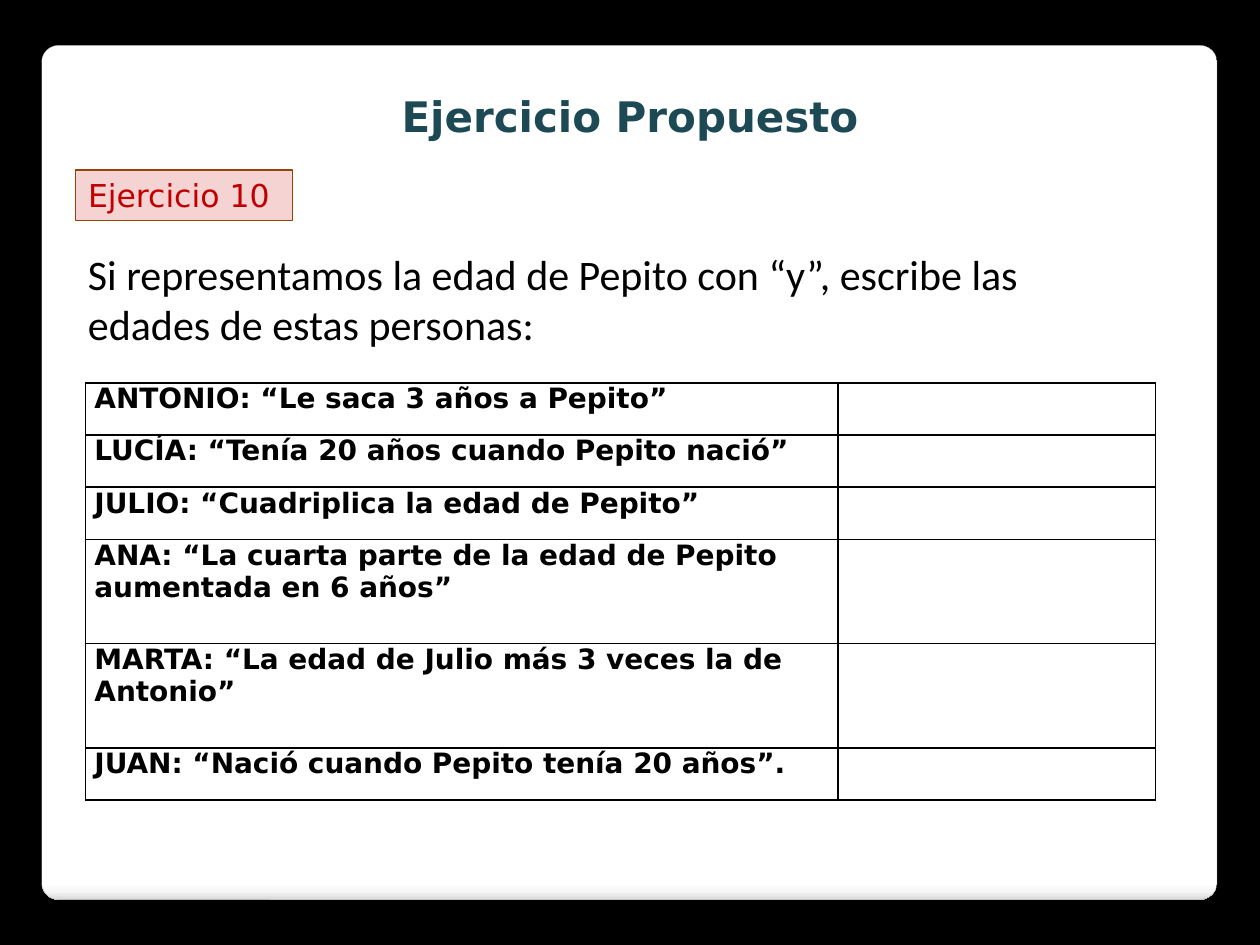
from lxml import etree
from pptx import Presentation
from pptx.dml.color import RGBColor
from pptx.enum.shapes import MSO_SHAPE
from pptx.enum.text import MSO_ANCHOR, PP_ALIGN
from pptx.oxml import parse_xml
from pptx.oxml.ns import qn
from pptx.util import Inches, Pt

ROUNDED, RECTANGLE = MSO_SHAPE.ROUNDED_RECTANGLE, MSO_SHAPE.RECTANGLE
LEFT, CENTER = PP_ALIGN.LEFT, PP_ALIGN.CENTER
TOP = MSO_ANCHOR.TOP
DRAWING_NS = "http://schemas.openxmlformats.org/drawingml/2006/main"

COLORS = {
    "background": "000000", "panel_line": "A4A4A4", "title": "1C4954",
    "label_fill": "F5D3D3", "label_line": "964305", "label": "C00000",
    "text": "000000", "white": "FFFFFF",
}
PANEL_STOPS = [(0, "FFFFFF"), (98, "FFFFFF"), (99, "F7F7F7"), (100, "DADADA")]

TITLE = "Ejercicio Propuesto"
LABEL = "Ejercicio 10"
QUESTION = ("Si representamos la edad de Pepito con “y”, "
            "escribe las edades de estas personas:")
# Statement and the number of lines its row allows
PEOPLE = [
    ("ANTONIO: “Le saca 3 años a Pepito”", 1),
    ("LUCÍA: “Tenía 20 años cuando Pepito nació”", 1),
    ("JULIO: “Cuadriplica la edad de Pepito”", 1),
    ("ANA: “La cuarta parte de la edad de Pepito aumentada en 6 años”", 2),
    ("MARTA: “La edad de Julio más 3 veces la de Antonio”", 2),
    ("JUAN: “Nació cuando Pepito tenía 20 años”.", 1),
]
COLUMN_WIDTHS = [5.97, 2.52]
TABLE_HEIGHT = 3.31

FORMATS = {
    "title": {"name": "DejaVu Sans", "size": Pt(24), "bold": True},
    "label": {"name": "DejaVu Sans", "size": Pt(18), "bold": False},
    "question": {"name": "Calibri", "size": Pt(24), "bold": False},
    "statement": {"name": "DejaVu Sans", "size": Pt(16), "bold": True},
}


def rgb(key):
    return RGBColor.from_string(COLORS[key])


def write(frame, text, style, color, align=LEFT):
    frame.word_wrap = True
    paragraph = frame.paragraphs[0]
    paragraph.alignment = align
    run = paragraph.add_run()
    run.text = text
    for attribute, value in FORMATS[style].items():
        setattr(run.font, attribute, value)
    run.font.color.rgb = rgb(color)


def add_panel_shape(slide, kind, box, line_color, line_width):
    shape = slide.shapes.add_shape(kind, *map(Inches, box))
    shape.shadow.inherit = False
    shape.line.color.rgb = rgb(line_color)
    shape.line.width = Pt(line_width)
    return shape


def add_text(slide, box, text, style, color, align=LEFT):
    frame = slide.shapes.add_textbox(*map(Inches, box)).text_frame
    write(frame, text, style, color, align)


def add_borders(cell):
    properties = cell._tc.get_or_add_tcPr()
    for position, side in enumerate(("lnL", "lnR", "lnT", "lnB")):
        properties.insert(position, parse_xml(
            f'<a:{side} xmlns:a="{DRAWING_NS}" w="{Pt(1)}"><a:solidFill>'
            f'<a:srgbClr val="{COLORS["text"]}"/></a:solidFill></a:{side}>'))


prs = Presentation()
prs.slide_width, prs.slide_height = Inches(10), Inches(7.5)
slide = prs.slides.add_slide(prs.slide_layouts[6])
slide.background.fill.solid()
slide.background.fill.fore_color.rgb = rgb("background")

# White panel, shaded along its lower edge
panel = add_panel_shape(slide, ROUNDED, (0.33, 0.36, 9.33, 6.78), "panel_line", 0.16)
panel.adjustments[0] = 0.02
panel.fill.gradient()
panel.fill.gradient_angle = 270
stops = panel._element.spPr.find(".//" + qn("a:gsLst"))
for stop in list(stops):
    stops.remove(stop)
for percent, color in PANEL_STOPS:
    stop = etree.SubElement(stops, qn("a:gs"), pos=str(percent * 1000))
    etree.SubElement(stop, qn("a:srgbClr"), val=color)
panel._element.spPr.find(qn("a:effectLst")).append(parse_xml(
    f'<a:outerShdw xmlns:a="{DRAWING_NS}" blurRad="{Pt(6)}" dist="{Pt(4)}" '
    'dir="5400000" rotWithShape="0"><a:srgbClr val="000000">'
    '<a:alpha val="25000"/></a:srgbClr></a:outerShdw>'))

# Title and exercise label
add_text(slide, (0.39, 0.67, 9.22, 0.5), TITLE, "title", "title", CENTER)
label = add_panel_shape(slide, RECTANGLE, (0.6, 1.35, 1.72, 0.4), "label_line", 0.75)
label.fill.solid()
label.fill.fore_color.rgb = rgb("label_fill")
write(label.text_frame, LABEL, "label", "label")

# Statements, each with an empty cell for the answer
table = slide.shapes.add_table(
    len(PEOPLE), len(COLUMN_WIDTHS), Inches(0.68), Inches(3.04),
    Inches(sum(COLUMN_WIDTHS)), Inches(TABLE_HEIGHT)).table
table.first_row = table.horz_banding = False
for column, width in zip(table.columns, COLUMN_WIDTHS):
    column.width = Inches(width)
line_height = TABLE_HEIGHT / sum(lines for _, lines in PEOPLE)
for row, (statement, lines) in zip(table.rows, PEOPLE):
    row.height = Inches(line_height * lines)
    for cell in row.cells:
        cell.margin_left = cell.margin_right = Inches(0.07)
        cell.margin_top = cell.margin_bottom = 0
        cell.vertical_anchor = TOP
        cell.fill.solid()
        cell.fill.fore_color.rgb = rgb("white")
        add_borders(cell)
    write(row.cells[0].text_frame, statement, "statement", "text")

# Question
add_text(slide, (0.6, 1.92, 8.57, 0.91), QUESTION, "question", "text")

prs.save("out.pptx")
